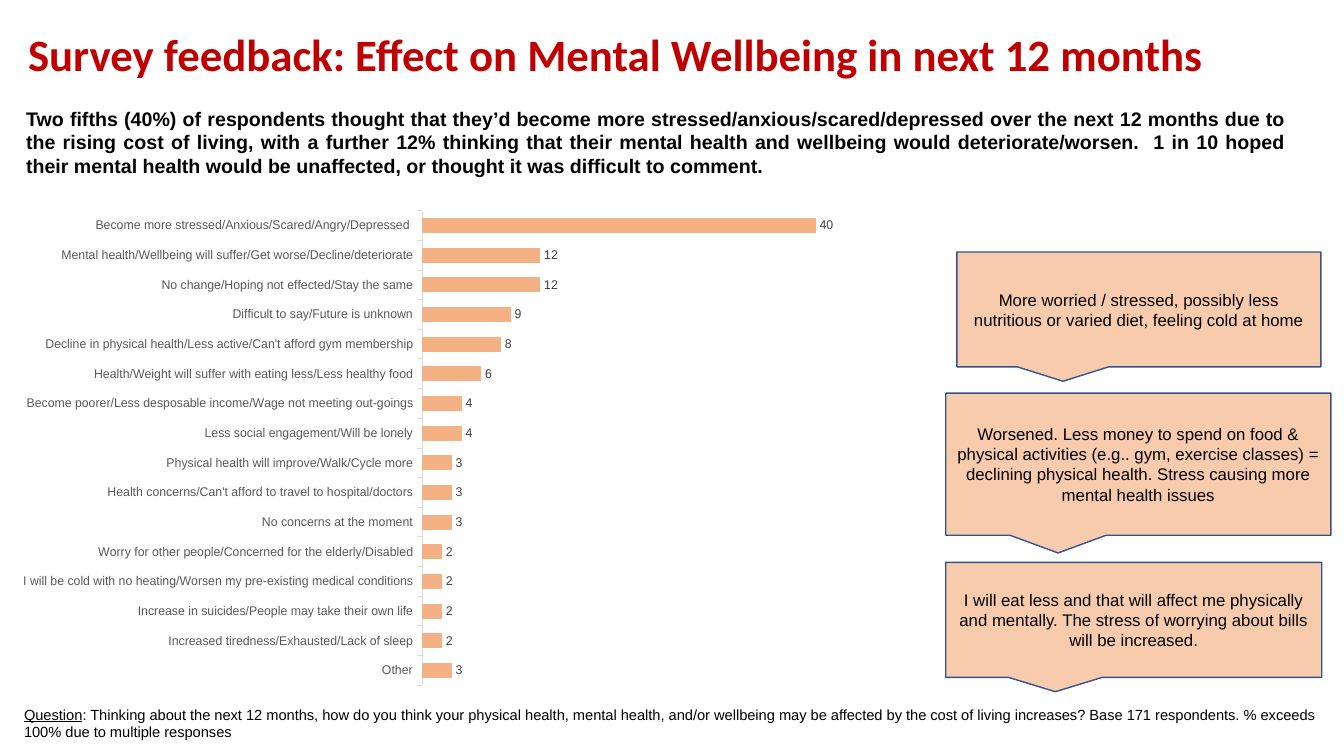
from lxml import etree
from pptx import Presentation
from pptx.chart.data import CategoryChartData
from pptx.dml.color import RGBColor
from pptx.enum.chart import XL_CHART_TYPE as ChartType, XL_LABEL_POSITION as LabelPos
from pptx.enum.chart import XL_TICK_LABEL_POSITION as TickLabel, XL_TICK_MARK as Tick
from pptx.enum.shapes import MSO_SHAPE as Preset
from pptx.enum.text import MSO_ANCHOR as Anchor, PP_ALIGN as Align
from pptx.oxml.ns import qn
from pptx.util import Inches, Pt

COLORS = {
    "title": "C00000", "text": "000000", "category": "595959", "value": "404040",
    "axis": "D9D9D9", "bar": "F4B183", "callout": "F8CBAD", "outline": "325491",
}

EFFECTS = [
    ("Become more stressed/Anxious/Scared/Angry/Depressed ", 40),
    ("Mental health/Wellbeing will suffer/Get worse/Decline/deteriorate", 12),
    ("No change/Hoping not effected/Stay the same", 12),
    ("Difficult to say/Future is unknown", 9),
    ("Decline in physical health/Less active/Can't afford gym membership", 8),
    ("Health/Weight will suffer with eating less/Less healthy food", 6),
    ("Become poorer/Less desposable income/Wage not meeting out-goings", 4),
    ("Less social engagement/Will be lonely", 4),
    ("Physical health will improve/Walk/Cycle more", 3),
    ("Health concerns/Can't afford to travel to hospital/doctors", 3),
    ("No concerns at the moment", 3),
    ("Worry for other people/Concerned for the elderly/Disabled", 2),
    ("I will be cold with no heating/Worsen my pre-existing medical conditions", 2),
    ("Increase in suicides/People may take their own life", 2),
    ("Increased tiredness/Exhausted/Lack of sleep", 2),
    ("Other", 3),
]

QUOTES = [
    ((9.49, 2.5, 3.61, 1.14),
     "More worried / stressed, possibly less nutritious or varied diet, feeling cold at home"),
    ((9.38, 5.58, 3.73, 1.14),
     "I will eat less and that will affect me physically and mentally. "
     "The stress of worrying about bills will be increased."),
    ((9.38, 3.9, 3.82, 1.41),
     "Worsened. Less money to spend on food & physical activities (e.g.. gym, exercise classes) = "
     "declining physical health. Stress causing more mental health issues"),
]


class SurveySlide:
    """Survey slide with one method for each kind of element."""

    def __init__(self, deck):
        self.slide = deck.slides.add_slide(deck.slide_layouts[6])
        self.shapes = self.slide.shapes

    def color(self, name):
        return RGBColor.from_string(COLORS[name])

    def style(self, font, color="text", **formats):
        for key, value in {"name": "Arial", **formats}.items():
            setattr(font, key, value)
        font.color.rgb = self.color(color)

    def fill_text(self, frame, runs, align=Align.LEFT, anchor=Anchor.TOP, spacing=1.0, **formats):
        frame.word_wrap = True
        frame.vertical_anchor = anchor
        paragraph = frame.paragraphs[0]
        paragraph.alignment = align
        paragraph.line_spacing = spacing
        for words, extra in runs:
            run = paragraph.add_run()
            run.text = words
            self.style(run.font, **{**formats, **extra})

    def text(self, place, runs, **formats):
        box = self.shapes.add_textbox(*map(Inches, place))
        self.fill_text(box.text_frame, runs, **formats)

    def callout(self, place, quote):
        bubble = self.shapes.add_shape(Preset.RECTANGULAR_CALLOUT, *map(Inches, place))
        bubble.shadow.inherit = False
        bubble.fill.solid()
        bubble.fill.fore_color.rgb = self.color("callout")
        bubble.line.color.rgb = self.color("outline")
        bubble.line.width = Pt(1)
        self.fill_text(bubble.text_frame, [(quote, {})], align=Align.CENTER,
                       anchor=Anchor.MIDDLE, size=Pt(12))

    def bar_chart(self, place, rows, plot_area):
        data = CategoryChartData(number_format="0")
        data.categories = [category for category, _ in rows]
        data.add_series("Series 1", [value for _, value in rows])
        chart = self.shapes.add_chart(ChartType.BAR_CLUSTERED, *map(Inches, place), data).chart
        chart.has_title = chart.has_legend = False
        self.style(chart.font, size=Pt(9))
        self.axes(chart)
        self.bars(chart.plots[0])
        self.place_plot(chart, plot_area)

    def axes(self, chart):
        category_axis, value_axis = chart.category_axis, chart.value_axis
        category_formats = {
            "reverse_order": True, "major_tick_mark": Tick.OUTSIDE,
            "minor_tick_mark": Tick.NONE, "tick_label_position": TickLabel.LOW,
        }
        value_formats = {
            "visible": False, "has_major_gridlines": False,
            "minimum_scale": 0, "maximum_scale": 45,
        }
        for axis, formats in ((category_axis, category_formats), (value_axis, value_formats)):
            for key, value in formats.items():
                setattr(axis, key, value)
        self.style(category_axis.tick_labels.font, "category", size=Pt(9))
        category_axis.format.line.color.rgb = self.color("axis")
        category_axis.format.line.width = Pt(0.75)

    def bars(self, plot):
        plot.gap_width = 100
        plot.vary_by_categories = False
        fill = plot.series[0].format.fill
        fill.solid()
        fill.fore_color.rgb = self.color("bar")
        plot.has_data_labels = True
        labels = plot.data_labels
        label_formats = {
            "show_value": True, "number_format": "0",
            "number_format_is_linked": False, "position": LabelPos.OUTSIDE_END,
        }
        for key, value in label_formats.items():
            setattr(labels, key, value)
        self.style(labels.font, "value", size=Pt(9))

    def place_plot(self, chart, plot_area):
        area = chart.element.find(".//" + qn("c:plotArea"))
        layout = area.find(qn("c:layout"))
        if layout is None:
            layout = etree.Element(qn("c:layout"))
            area.insert(0, layout)
        manual = etree.SubElement(layout, qn("c:manualLayout"))
        settings = [("layoutTarget", "inner"), ("xMode", "edge"), ("yMode", "edge")]
        for tag, value in settings + list(zip("xywh", plot_area)):
            etree.SubElement(manual, qn("c:" + tag)).set("val", str(value))


def main():
    deck = Presentation()
    deck.slide_width, deck.slide_height = Inches(13.33), Inches(7.5)
    survey = SurveySlide(deck)
    survey.text(
        (0.18, 0.14, 13.01, 0.85),
        [("Survey feedback: Effect on Mental Wellbeing in next 12 months", {})],
        anchor=Anchor.MIDDLE, spacing=0.9, name="Calibri", size=Pt(32), bold=True, color="title")
    survey.text(
        (0.14, 6.95, 13.06, 0.45),
        [("Question", {"underline": True}),
         (": Thinking about the next 12 months, how do you think your physical health, mental "
          "health, and/or wellbeing may be affected by the cost of living increases? "
          "Base 171 respondents. % exceeds 100% due to multiple responses", {})],
        size=Pt(10.5))
    survey.text(
        (0.16, 1.01, 12.7, 0.81),
        [("Two fifths (40%) of respondents thought that they’d become more "
          "stressed/anxious/scared/depressed over the next 12 months due to the rising cost of "
          "living, with a further 12% thinking that their mental health and wellbeing would "
          "deteriorate/worsen.  1 in 10 hoped their mental health would be unaffected, or thought "
          "it was difficult to comment.", {})],
        align=Align.JUSTIFY, size=Pt(14), bold=True)
    survey.bar_chart((0.23, 1.94, 8.35, 5.01), EFFECTS, (0.46, 0.03, 0.54, 0.94))
    for place, quote in QUOTES:
        survey.callout(place, quote)
    deck.save("out.pptx")


if __name__ == "__main__":
    main()
